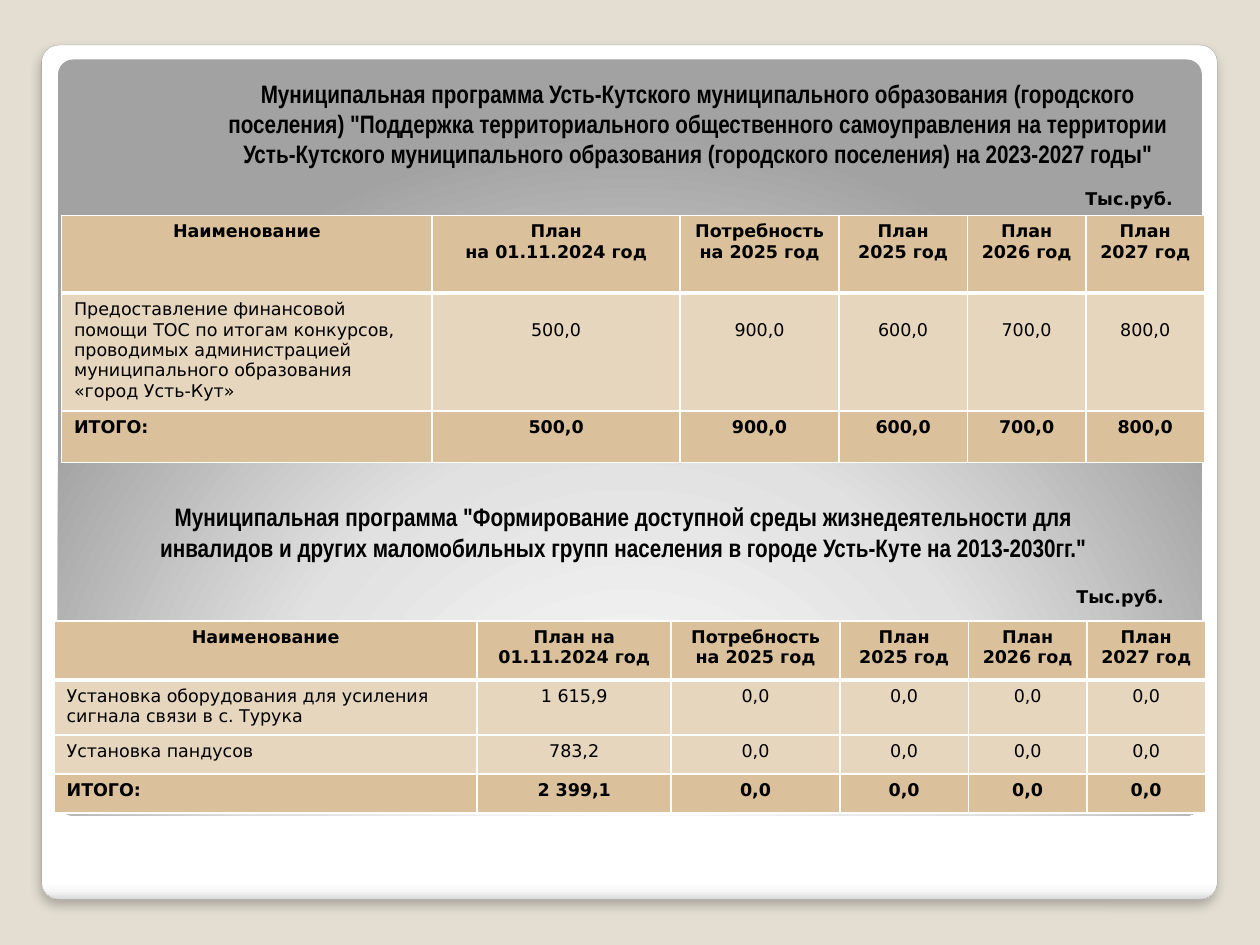
from lxml import etree
from pptx import Presentation
from pptx.dml.color import RGBColor
from pptx.enum.shapes import MSO_SHAPE as SHAPE
from pptx.enum.text import MSO_ANCHOR as ANCHOR, PP_ALIGN as ALIGN
from pptx.oxml import parse_xml
from pptx.oxml.ns import qn
from pptx.util import Cm, Pt

NS = 'xmlns:a="http://schemas.openxmlformats.org/drawingml/2006/main"'


def rgb(code):
    return RGBColor.from_string(code)


def put(frame, text, size=10, font="DejaVu Sans", bold=True,
        align=ALIGN.CENTER, anchor=ANCHOR.TOP):
    frame.word_wrap = True
    frame.vertical_anchor = anchor
    frame.text = text
    for para in frame.paragraphs:
        para.alignment = align
        for run in para.runs:
            run.font.size = Pt(size)
            run.font.name = font
            run.font.bold = bold
            run.font.color.rgb = rgb("000000")


deck = Presentation()
deck.slide_width, deck.slide_height = Cm(25.4), Cm(19.05)
slide = deck.slides.add_slide(deck.slide_layouts[6])
slide.background.fill.solid()
slide.background.fill.fore_color.rgb = rgb("E3DED1")

# White card and grey panel, both with gradient fills
panels = [
    ((0.84, 0.91, 23.7, 17.22),
     [(0, "FFFFFF"), (98, "FFFFFF"), (99, "F7F7F7"), (100, "DADADA")],
     '<a:lin ang="5400000" scaled="0"/>'),
    ((1.17, 1.2, 23.06, 15.24),
     [(0, "FFFFFF"), (55, "E1E1E1"), (100, "A2A2A2")],
     '<a:path path="circle"><a:fillToRect l="50000" t="175000" '
     'r="50000" b="-75000"/></a:path>'),
]
cards = []
for place, stops, kind in panels:
    card = slide.shapes.add_shape(SHAPE.ROUNDED_RECTANGLE, *map(Cm, place))
    card.adjustments[0] = 0.02
    card.shadow.inherit = False
    card.line.fill.background()
    card.fill.gradient()
    marks = "".join(f'<a:gs pos="{pos * 1000}"><a:srgbClr val="{code}"/></a:gs>'
                    for pos, code in stops)
    props = card._element.spPr
    props.replace(props.find(qn("a:gradFill")), parse_xml(
        f'<a:gradFill {NS} rotWithShape="1"><a:gsLst>{marks}</a:gsLst>{kind}</a:gradFill>'))
    cards.append(card)

# Thin outline and soft shadow on the white card
cards[0].line.color.rgb = rgb("A4A4A4")
cards[0].line.width = Pt(0.16)
cards[0]._element.spPr.find(qn("a:effectLst")).append(parse_xml(
    f'<a:outerShdw {NS} blurRad="{Pt(6)}" dist="{Pt(4)}" dir="5400000" algn="tl" '
    'rotWithShape="0"><a:srgbClr val="000000"><a:alpha val="25000"/></a:srgbClr>'
    '</a:outerShdw>'))

# Headings and unit labels
head = dict(size=14.4, font="Arial Narrow", anchor=ANCHOR.BOTTOM)
unit = dict(anchor=ANCHOR.MIDDLE)
labels = [
    ((3.86, 1.55, 20.42, 1.98), head,
     'Муниципальная программа Усть-Кутского муниципального образования '
     '(городского поселения) "Поддержка территориального общественного '
     'самоуправления на территории Усть-Кутского муниципального образования '
     '(городского поселения) на 2023-2027 годы"'),
    ((21.49, 3.68, 2.54, 0.64), unit, "Тыс.руб."),
    ((2.36, 10.06, 20.42, 1.4), head,
     'Муниципальная программа "Формирование доступной среды жизнедеятельности '
     'для инвалидов и других маломобильных групп населения в городе Усть-Куте '
     'на 2013-2030гг."'),
    ((21.31, 11.71, 2.54, 0.64), unit, "Тыс.руб."),
]
for place, style, text in labels:
    box = slide.shapes.add_textbox(*map(Cm, place))
    put(box.text_frame, text, **style)

# Tables: place, column widths, row heights, extra top gap of values, rows
years = ["План\n2025 год", "План\n2026 год", "План\n2027 год"]
need = "Потребность\nна 2025 год"
zeros = ["0,0"] * 4
sums = ["500,0", "900,0", "600,0", "700,0", "800,0"]
tables = [
    ((1.24, 4.34), [7.47, 5, 3.2, 2.59, 2.39, 2.39], [1.57, 2.29, 1.04], 0.41, [
        ["Наименование", "План\nна 01.11.2024 год", need, *years],
        ["Предоставление финансовой помощи ТОС по итогам конкурсов, проводимых "
         "администрацией муниципального образования «город Усть-Кут»", *sums],
        ["ИТОГО:", *sums],
    ]),
    ((1.09, 12.52), [8.53, 3.91, 3.4, 2.59, 2.39, 2.39], [1.19, 1.09, 0.79, 0.79], 0, [
        ["Наименование", "План на\n01.11.2024 год", need, *years],
        ["Установка оборудования для усиления сигнала связи в с. Турука",
         "1 615,9", *zeros],
        ["Установка пандусов", "783,2", *zeros],
        ["ИТОГО:", "2 399,1", *zeros],
    ]),
]
for place, cols, highs, gap, rows in tables:
    grid = slide.shapes.add_table(len(rows), len(cols), *map(Cm, place),
                                  Cm(sum(cols)), Cm(sum(highs))).table
    grid.first_row = grid.horz_banding = False
    for col, wide in zip(grid.columns, cols):
        col.width = Cm(wide)
    for i, row in enumerate(rows):
        grid.rows[i].height = Cm(highs[i])
        body = 0 < i < len(rows) - 1
        for j, text in enumerate(row):
            cell = grid.cell(i, j)
            name = i > 0 and j == 0
            put(cell.text_frame, text, bold=not body,
                align=ALIGN.LEFT if name else ALIGN.CENTER)
            if body and not name:
                cell.margin_top = Cm(0.13 + gap)
            cell.fill.solid()
            cell.fill.fore_color.rgb = rgb("E6D6BD" if body else "DAC19B")
            # White borders, thick below the header
            props = cell._tc.get_or_add_tcPr()
            for k, side in enumerate(["lnL", "lnR", "lnT", "lnB"]):
                thick = (i, side) in [(0, "lnB"), (1, "lnT")]
                line = etree.Element(qn("a:" + side), w=str(Pt(3 if thick else 1)))
                paint = etree.SubElement(line, qn("a:solidFill"))
                etree.SubElement(paint, qn("a:srgbClr"), val="FFFFFF")
                props.insert(k, line)

deck.save("out.pptx")
